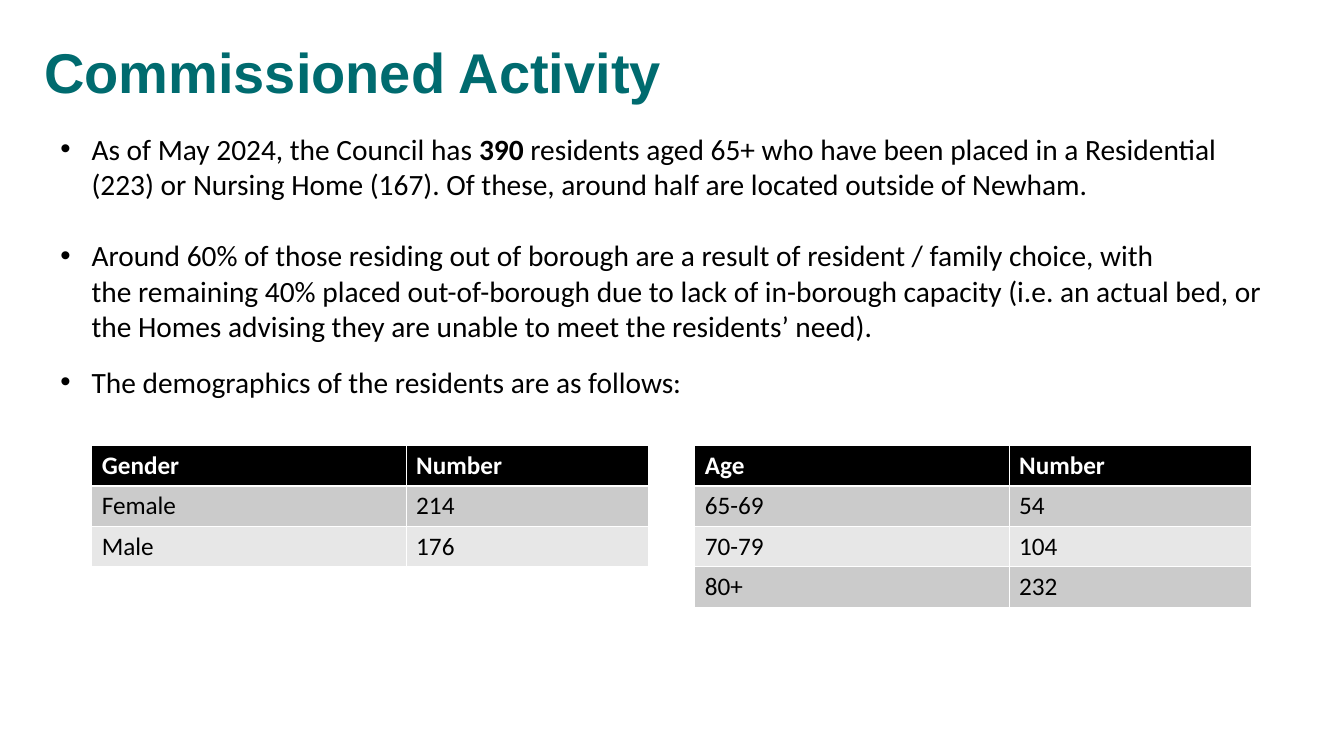
from pptx import Presentation
from pptx.dml.color import RGBColor
from pptx.enum.text import MSO_ANCHOR as Anchor
from pptx.oxml.xmlchemy import OxmlElement as Element
from pptx.util import Inches, Pt

WIDTH, HEIGHT = 13.33, 7.5
TEAL, BLACK, WHITE = "006B6F", "000000", "FFFFFF"
BANDS = ("CBCBCB", "E7E7E7")
THIN, THICK = 0.65, 1.94
ROW_HEIGHT = 0.4
NAME_SHARE = 0.565
HARD_SPACE = chr(160)

# Each bullet: space before in points, then (text, bold) spans; ~ is a hard space.
BULLETS = [
    (0, [("As of May 2024, the Council has~", False),
         ("390~", True),
         ("residents aged 65+ who have been placed in a~Residential (223) or "
          "Nursing Home (167).~Of these, around half are~located outside of "
          "Newham.", False)]),
    (25.6, [("Around 60% of those residing out of borough are a result of "
             "resident /~family~choice, with the~remaining 40% placed "
             "out-of-borough due to lack of in-borough capacity~(i.e.~an "
             "actual bed,~or the Homes advising they are unable to meet the "
             "residents’ need).", False)]),
    (14.6, [("The demographics of the residents are as follows:", False)]),
]
GENDER = [("Gender", "Number"), ("Female", "214"), ("Male", "176")]
AGE = [("Age", "Number"), ("65-69", "54"), ("70-79", "104"), ("80+", "232")]


def colour(value):
    return RGBColor.from_string(value)


def style(font, name, size, shade, bold=False):
    font.name, font.size, font.bold = name, Pt(size), bold
    font.color.rgb = colour(shade)


def add_text_frame(page, box, anchor):
    frame = page.shapes.add_textbox(*map(Inches, box)).text_frame
    frame.word_wrap = True
    frame.vertical_anchor = anchor
    return frame


def add_title(page, box, text):
    para = add_text_frame(page, box, Anchor.BOTTOM).paragraphs[0]
    para.text = text
    para.line_spacing = 0.9
    style(para.font, "Arial", 40, TEAL, True)


def set_bullet(para, indent):
    props = para._p.get_or_add_pPr()
    props.set("marL", str(Inches(indent)))
    props.set("indent", str(-Inches(indent)))
    for tag, key, value in (("a:buFont", "typeface", "Arial"),
                            ("a:buChar", "char", "•")):
        mark = Element(tag)
        mark.set(key, value)
        props.append(mark)


def add_bullets(page, box, bullets):
    frame = add_text_frame(page, box, Anchor.TOP)
    for index, (gap, spans) in enumerate(bullets):
        para = frame.add_paragraph() if index else frame.paragraphs[0]
        set_bullet(para, 0.31)
        if gap:
            para.space_before = Pt(gap)
        style(para.font, "Calibri", 21, BLACK)
        for text, bold in spans:
            span = para.add_run()
            span.text = text.replace("~", HARD_SPACE)
            if bold:
                span.font.bold = True


def set_borders(cell, top, bottom):
    """Draw white edges, with the given top and bottom widths in points."""
    props = cell._tc.get_or_add_tcPr()
    widths = {"a:lnL": THIN, "a:lnR": THIN, "a:lnT": top, "a:lnB": bottom}
    for place, (tag, width) in enumerate(widths.items()):
        line, fill, shade = map(Element, (tag, "a:solidFill", "a:srgbClr"))
        line.set("w", str(Pt(width)))
        shade.set("val", WHITE)
        fill.append(shade)
        line.append(fill)
        props.insert(place, line)


def add_count_table(page, box, rows):
    left, top, width = box
    table = page.shapes.add_table(
        len(rows), 2, Inches(left), Inches(top), Inches(width),
        Inches(ROW_HEIGHT * len(rows))).table
    for column, share in zip(table.columns, (NAME_SHARE, 1 - NAME_SHARE)):
        column.width = Inches(width * share)
    for r, values in enumerate(rows):
        header = r == 0
        for c, text in enumerate(values):
            cell = table.cell(r, c)
            cell.text = text
            cell.fill.solid()
            cell.fill.fore_color.rgb = colour(
                BLACK if header else BANDS[(r - 1) % 2])
            style(cell.text_frame.paragraphs[0].font, "Calibri", 18,
                  WHITE if header else BLACK, header)
            set_borders(cell, THICK if r == 1 else THIN,
                        THICK if header else THIN)


def add_table_row(page, box, tables, gap):
    """Set the tables side by side in equal columns across the box."""
    left, top, width = box
    each = (width - gap * (len(tables) - 1)) / len(tables)
    for index, rows in enumerate(tables):
        add_count_table(page, (left + index * (each + gap), top, each), rows)


def main():
    deck = Presentation()
    deck.slide_width, deck.slide_height = Inches(WIDTH), Inches(HEIGHT)
    page = deck.slides.add_slide(deck.slide_layouts[6])
    add_title(page, (0.34, 0, 10.34, 1.1), "Commissioned Activity")
    add_bullets(page, (0.5, 1.25, 12.27, 3.11), BULLETS)
    add_table_row(page, (0.91, 4.42, 11.5), (GENDER, AGE), 0.46)
    deck.save("out.pptx")


if __name__ == "__main__":
    main()
